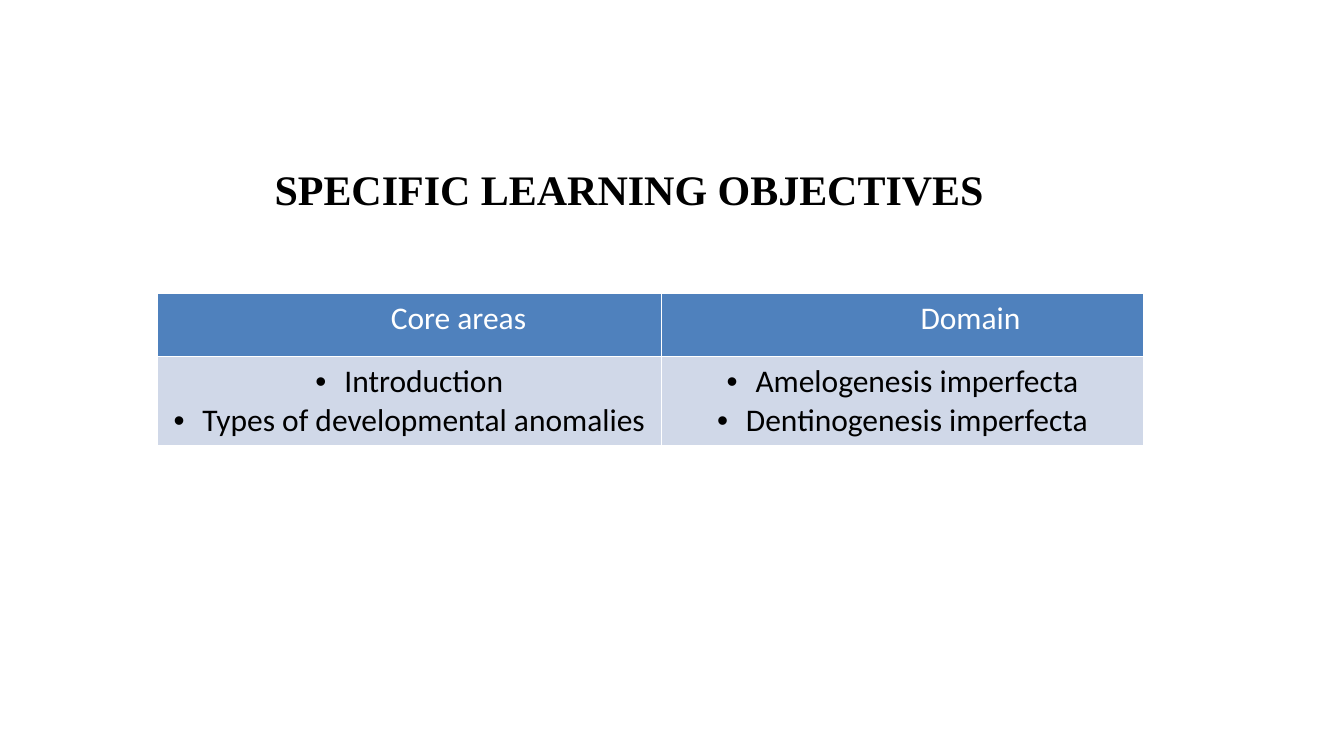
from pptx import Presentation
from pptx.dml.color import RGBColor
from pptx.enum.text import MSO_ANCHOR, PP_ALIGN
from pptx.oxml.ns import qn
from pptx.util import Inches, Pt
from lxml.etree import SubElement

BLACK = RGBColor(0x00, 0x00, 0x00)
WHITE = RGBColor(0xFF, 0xFF, 0xFF)
BLUE = RGBColor(0x4F, 0x81, 0xBD)
PALE = RGBColor(0xD0, 0xD8, 0xE8)

# Heading, its left margin, column width and bulleted topics
COLUMNS = [
    ("Core areas", 0.88, 4, ["Introduction", "Types of developmental anomalies"]),
    ("Domain", 1.18, 3.83, ["Amelogenesis imperfecta", "Dentinogenesis imperfecta"]),
]


def style(para, color):
    para.alignment = PP_ALIGN.CENTER
    para.font.name = "Calibri"
    para.font.size = Pt(18)
    para.font.bold = False
    para.font.color.rgb = color


def add_bullet(para):
    props = para._p.get_or_add_pPr()
    props.set("marL", str(Inches(0.23)))
    props.set("indent", str(-Inches(0.23)))
    SubElement(props, qn("a:buFont"), typeface="Arial")
    SubElement(props, qn("a:buChar"), char="•")


deck = Presentation()
deck.slide_width = Inches(10.67)
deck.slide_height = Inches(6)
slide = deck.slides.add_slide(deck.slide_layouts[5])

title = slide.shapes.title
title.left, title.top = Inches(1.12), Inches(1.25)
title.width, title.height = Inches(7.75), Inches(0.5)
title.text = "SPECIFIC LEARNING OBJECTIVES"
title.text_frame.vertical_anchor = MSO_ANCHOR.MIDDLE
para = title.text_frame.paragraphs[0]
para.alignment = PP_ALIGN.CENTER
para.font.name = "Times New Roman"
para.font.size = Pt(24)
para.font.bold = True
para.font.color.rgb = BLACK

table = slide.shapes.add_table(
    2, 2, Inches(1.25), Inches(2.33), Inches(7.83), Inches(1.2)
).table
table.rows[0].height = Inches(0.5)
table.rows[1].height = Inches(0.7)

for col, (heading, margin, width, topics) in enumerate(COLUMNS):
    table.columns[col].width = Inches(width)
    head, body = table.cell(0, col), table.cell(1, col)
    for cell, fill in ((head, BLUE), (body, PALE)):
        cell.fill.solid()
        cell.fill.fore_color.rgb = fill

    head.margin_left = Inches(margin)
    head.text = heading
    style(head.text_frame.paragraphs[0], WHITE)

    body.text = "\n".join(topics)
    for para in body.text_frame.paragraphs:
        add_bullet(para)
        style(para, BLACK)

deck.save("out.pptx")
